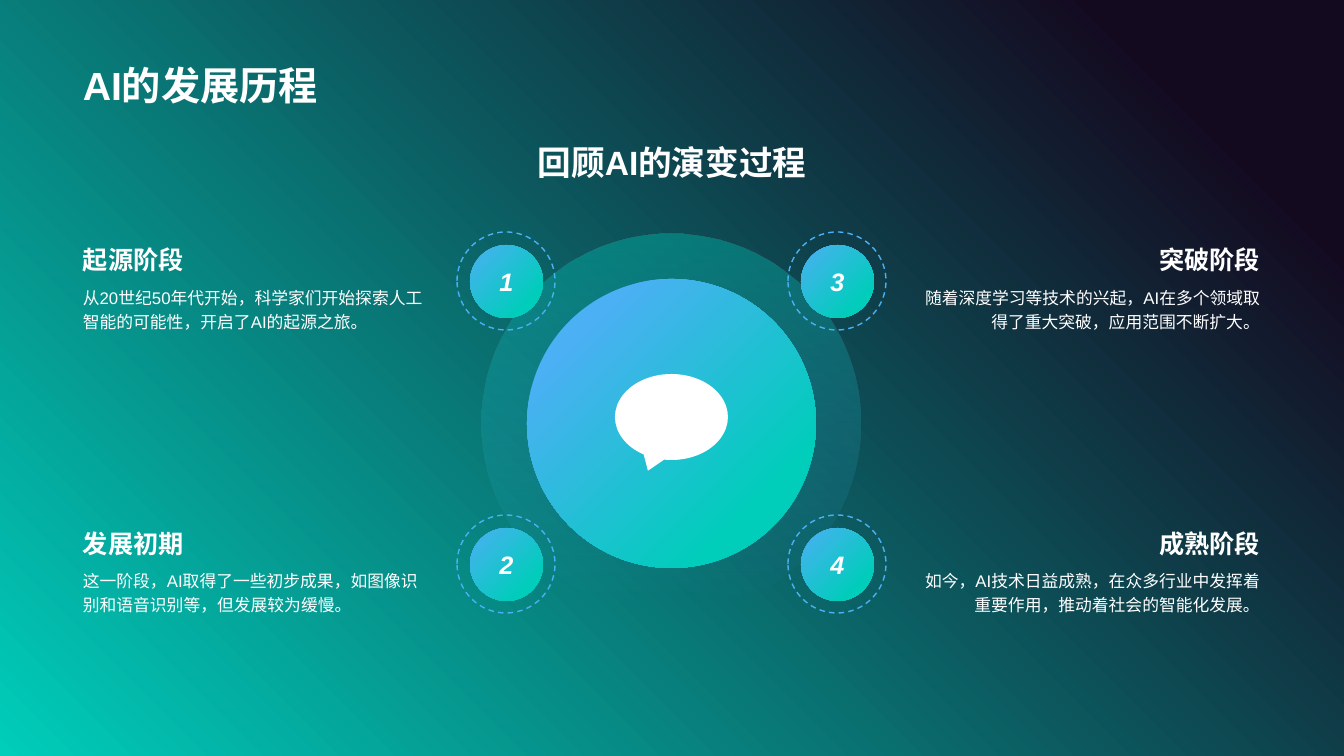
from pptx import Presentation
from pptx.dml.color import RGBColor
from pptx.enum.dml import MSO_LINE
from pptx.enum.shapes import MSO_SHAPE
from pptx.enum.text import MSO_ANCHOR, PP_ALIGN
from pptx.oxml.ns import qn
from pptx.util import Pt
from lxml import etree

OVAL, SPEECH_BUBBLE = MSO_SHAPE.OVAL, MSO_SHAPE.OVAL_CALLOUT
DASH = MSO_LINE.DASH
TOP, MIDDLE, BOTTOM = MSO_ANCHOR.TOP, MSO_ANCHOR.MIDDLE, MSO_ANCHOR.BOTTOM
LEFT, CENTER, RIGHT = PP_ALIGN.LEFT, PP_ALIGN.CENTER, PP_ALIGN.RIGHT

EMU_PER_PX = 914400 / 100.8
FONT = "Arial"
COLORS = {"white": "FFFFFF", "blue": "4BB0F4", "teal": "00CDBA", "night": "140A20"}

ROW_TOPS = (232, 515)
COLUMNS = ((73, 457, LEFT), (903, 788, RIGHT))
STAGES = (
    ("起源阶段", "从20世纪50年代开始，科学家们开始探索人工智能的可能性，开启了AI的起源之旅。"),
    ("发展初期", "这一阶段，AI取得了一些初步成果，如图像识别和语音识别等，但发展较为缓慢。"),
    ("突破阶段", "随着深度学习等技术的兴起，AI在多个领域取得了重大突破，应用范围不断扩大。"),
    ("成熟阶段", "如今，AI技术日益成熟，在众多行业中发挥着重要作用，推动着社会的智能化发展。"),
)


def px(length):
    """Turn pixels into EMU."""
    return round(length * EMU_PER_PX)


def color(name):
    """Look up a palette colour."""
    return RGBColor.from_string(COLORS[name])


def fill_gradient(fill, angle, *stops):
    """Fill with a two-stop gradient at a counter-clockwise angle."""
    fill.gradient()
    fill.gradient_angle = angle
    for stop, (position, name) in zip(fill.gradient_stops, stops):
        stop.position = position
        stop.color.rgb = color(name)


def fade_gradient(shape, *opacities):
    """Give each gradient stop an opacity in percent."""
    for tint, opacity in zip(shape._element.spPr.iter(qn("a:srgbClr")), opacities):
        etree.SubElement(tint, qn("a:alpha")).set("val", str(opacity * 1000))


def write(frame, text, size, align, anchor, bold=False, italic=False, spacing=None):
    """Set a single white paragraph in a text frame."""
    frame.text = text
    frame.word_wrap = True
    frame.vertical_anchor = anchor
    paragraph = frame.paragraphs[0]
    paragraph.alignment = align
    if spacing:
        paragraph.line_spacing = spacing
    font = paragraph.runs[0].font
    font.name, font.size = FONT, Pt(size)
    font.bold, font.italic = bold, italic
    font.color.rgb = color("white")


def add_text(slide, left, top, width, height, text, size, align, anchor, **style):
    """Add a wrapped text box."""
    box = slide.shapes.add_textbox(px(left), px(top), px(width), px(height))
    write(box.text_frame, text, size, align, anchor, **style)


def add_figure(slide, kind, left, top, width, height):
    """Add a preset shape without shadow, fill or line."""
    figure = slide.shapes.add_shape(kind, px(left), px(top), px(width), px(height))
    figure.shadow.inherit = False
    figure.fill.background()
    figure.line.fill.background()
    return figure


def add_hub(slide):
    """Draw the central disc with its halo and speech bubble."""
    halo = add_figure(slide, OVAL, 482, 234, 379, 379)
    fill_gradient(halo.fill, 90, (0, "blue"), (1, "teal"))
    fade_gradient(halo, 0, 37)
    core = add_figure(slide, OVAL, 527, 279, 289, 289)
    fill_gradient(core.fill, 315, (0.18, "blue"), (0.79, "teal"))
    bubble = add_figure(slide, SPEECH_BUBBLE, 615, 374, 113, 86)
    bubble.fill.solid()
    bubble.fill.fore_color.rgb = color("white")


def add_badge(slide, left, top, number):
    """Draw a numbered disc inside a dashed ring."""
    ring = add_figure(slide, OVAL, left, top, 98, 98)
    ring.line.color.rgb = color("blue")
    ring.line.width = Pt(1)
    ring.line.dash_style = DASH
    disc = add_figure(slide, OVAL, left + 13, top + 13, 73, 73)
    fill_gradient(disc.fill, 315, (0, "blue"), (0.8, "teal"))
    frame = disc.text_frame
    frame.margin_left = frame.margin_right = frame.margin_top = frame.margin_bottom = 0
    write(frame, str(number), 18, CENTER, MIDDLE, bold=True, italic=True)


def add_stage(slide, index, heading, body):
    """Place one stage, filling the columns from top to bottom."""
    column, row = divmod(index, len(ROW_TOPS))
    text_left, badge_left, align = COLUMNS[column]
    top = ROW_TOPS[row]
    add_text(slide, text_left, top - 38, 367, 86, heading, 18, align, BOTTOM, bold=True)
    add_text(slide, text_left, top + 47, 367, 113, body, 12, align, TOP, spacing=1.2)
    add_badge(slide, badge_left, top, index + 1)


def main():
    """Build and save the slide."""
    deck = Presentation()
    deck.slide_width, deck.slide_height = px(1344), px(756)
    slide = deck.slides.add_slide(deck.slide_layouts[6])
    fill_gradient(slide.background.fill, 45, (0, "teal"), (0.88, "night"))
    add_text(slide, 73, 14, 1198, 99, "AI的发展历程", 28, LEFT, BOTTOM, bold=True)
    add_hub(slide)
    for index, (heading, body) in enumerate(STAGES):
        add_stage(slide, index, heading, body)
    add_text(slide, 73, 125, 1198, 74, "回顾AI的演变过程", 24, CENTER, MIDDLE, bold=True)
    deck.save("out.pptx")


if __name__ == "__main__":
    main()
